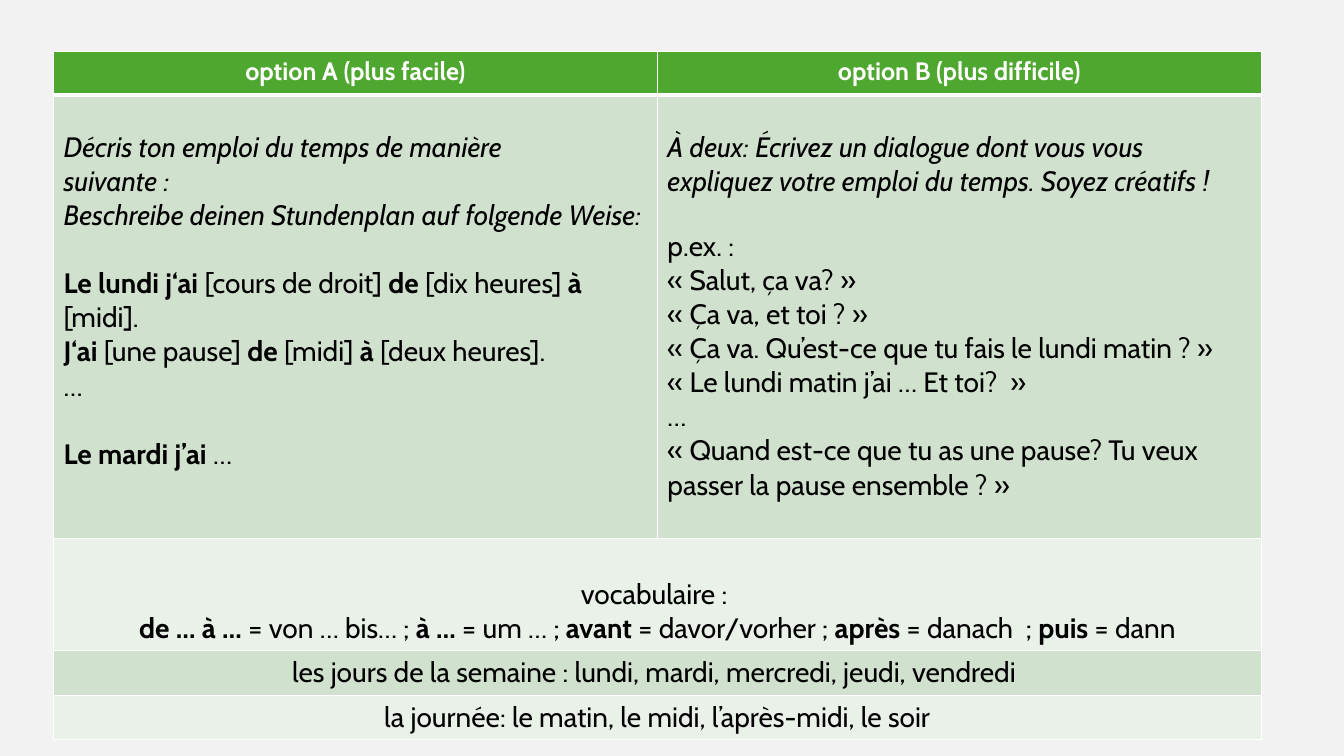
"""Build a slide with two writing tasks and a French vocabulary table."""
from dataclasses import dataclass

from lxml.etree import SubElement
from pptx import Presentation
from pptx.dml.color import RGBColor
from pptx.enum.text import PP_ALIGN
from pptx.oxml.ns import qn
from pptx.util import Inches, Pt

BACKGROUND = RGBColor(0xF2, 0xF2, 0xF2)
GREEN = RGBColor(0x4E, 0xA7, 0x2E)
BAND = RGBColor(0xD0, 0xE1, 0xCD)
PALE = RGBColor(0xE9, 0xF1, 0xE8)
WHITE = RGBColor(0xFF, 0xFF, 0xFF)
BLACK = RGBColor(0, 0, 0)

ROW_HEIGHTS = [0.43, 4.4, 1.11, 0.44, 0.44]
ROW_FILLS = [GREEN, BAND, PALE, BAND, PALE]
COLUMN_WIDTH = 5.99


@dataclass
class Line:
    """A paragraph; asterisks enclose bold words, gap is the space before in points."""
    text: str
    gap: float = 0
    italic: bool = False


HEADINGS = ["option A (plus facile)", "option B (plus difficile)"]
OPTION_A = [
    Line("Décris ton emploi du temps de manière", italic=True),
    Line("suivante :", italic=True),
    Line("Beschreibe deinen Stundenplan auf folgende Weise:", italic=True),
    Line("*Le lundi j‘ai *[cours de droit] *de* [dix heures] *à* [midi].", gap=24.4),
    Line("*J‘ai *[une pause] *de* [midi]* à *[deux heures]."),
    Line("…"),
    Line("*Le mardi j’ai *…", gap=24.4),
]
OPTION_B = [
    Line("À deux: Écrivez un dialogue dont vous vous expliquez votre emploi du temps. "
         "Soyez créatifs !", italic=True),
    Line("p.ex. :", gap=22),
    Line("« Salut, ça va? »"),
    Line("« Ça va, et toi ? »"),
    Line("« Ça va. Qu’est-ce que tu fais le lundi matin ? »"),
    Line("« Le lundi matin j’ai … Et toi?  »"),
    Line("…"),
    Line("« Quand est-ce que tu as une pause? Tu veux passer la pause ensemble ? »"),
]
VOCABULARY = [
    Line("vocabulaire : "),
    Line("*de … à … *= von … bis… ;* à … *= um … ; *avant *= davor/vorher ;"
         "* après *= danach  ; *puis *= dann"),
]
WEEKDAYS = [Line("les jours de la semaine : lundi, mardi, mercredi, jeudi, vendredi ")]
DAYTIME = [Line("la journée: le matin, le midi, l’après-midi, le soir")]


def write_lines(cell, lines, align=PP_ALIGN.LEFT, size=20, color=BLACK, top=0.05):
    """Fill a cell with formatted paragraphs."""
    cell.margin_top = Inches(top)
    box = cell.text_frame
    for number, line in enumerate(lines):
        para = box.add_paragraph() if number else box.paragraphs[0]
        para.alignment = align
        para.space_before = Pt(line.gap)
        for index, words in enumerate(line.text.split("*")):
            if not words:
                continue
            span = para.add_run()
            span.text = words
            formats = {"name": "Cabin", "size": Pt(size),
                       "bold": index % 2 == 1, "italic": line.italic}
            for name, value in formats.items():
                setattr(span.font, name, value)
            span.font.color.rgb = color


def style_cell(cell, fill, top_width, bottom_width):
    """Give a cell white borders and a plain fill."""
    properties = cell._tc.get_or_add_tcPr()
    widths = {"L": 1, "R": 1, "T": top_width, "B": bottom_width}
    for side, width in widths.items():
        border = SubElement(properties, qn(f"a:ln{side}"), w=str(Pt(width)))
        paint = SubElement(border, qn("a:solidFill"))
        SubElement(paint, qn("a:srgbClr"), val=str(WHITE))
    cell.fill.solid()
    cell.fill.fore_color.rgb = fill


def add_task_table(page):
    """Add the empty table with its rows, borders and merged cells."""
    table = page.shapes.add_table(
        len(ROW_HEIGHTS), len(HEADINGS), Inches(0.53), Inches(0.51),
        Inches(COLUMN_WIDTH * len(HEADINGS)), Inches(sum(ROW_HEIGHTS))).table
    for column in table.columns:
        column.width = Inches(COLUMN_WIDTH)
    for index, (height, fill) in enumerate(zip(ROW_HEIGHTS, ROW_FILLS)):
        row = table.rows[index]
        row.height = Inches(height)
        for cell in row.cells:
            style_cell(cell, fill, 3 if index == 1 else 1, 3 if index == 0 else 1)
        if index > 1:
            row.cells[0].merge(row.cells[1])
    return table


def main():
    """Create the deck and save it."""
    deck = Presentation()
    deck.slide_width, deck.slide_height = Inches(13.33), Inches(7.5)
    page = deck.slides.add_slide(deck.slide_layouts[6])
    page.background.fill.solid()
    page.background.fill.fore_color.rgb = BACKGROUND

    table = add_task_table(page)
    for column, heading in enumerate(HEADINGS):
        write_lines(table.cell(0, column), [Line(f"*{heading}*")],
                    PP_ALIGN.CENTER, size=18, color=WHITE)
    for column, lines in enumerate([OPTION_A, OPTION_B]):
        write_lines(table.cell(1, column), lines, top=0.35)
    write_lines(table.cell(2, 0), VOCABULARY, PP_ALIGN.CENTER, top=0.39)
    for row, lines in enumerate([WEEKDAYS, DAYTIME], start=3):
        write_lines(table.cell(row, 0), lines, PP_ALIGN.CENTER)
    deck.save("out.pptx")


if __name__ == "__main__":
    main()
